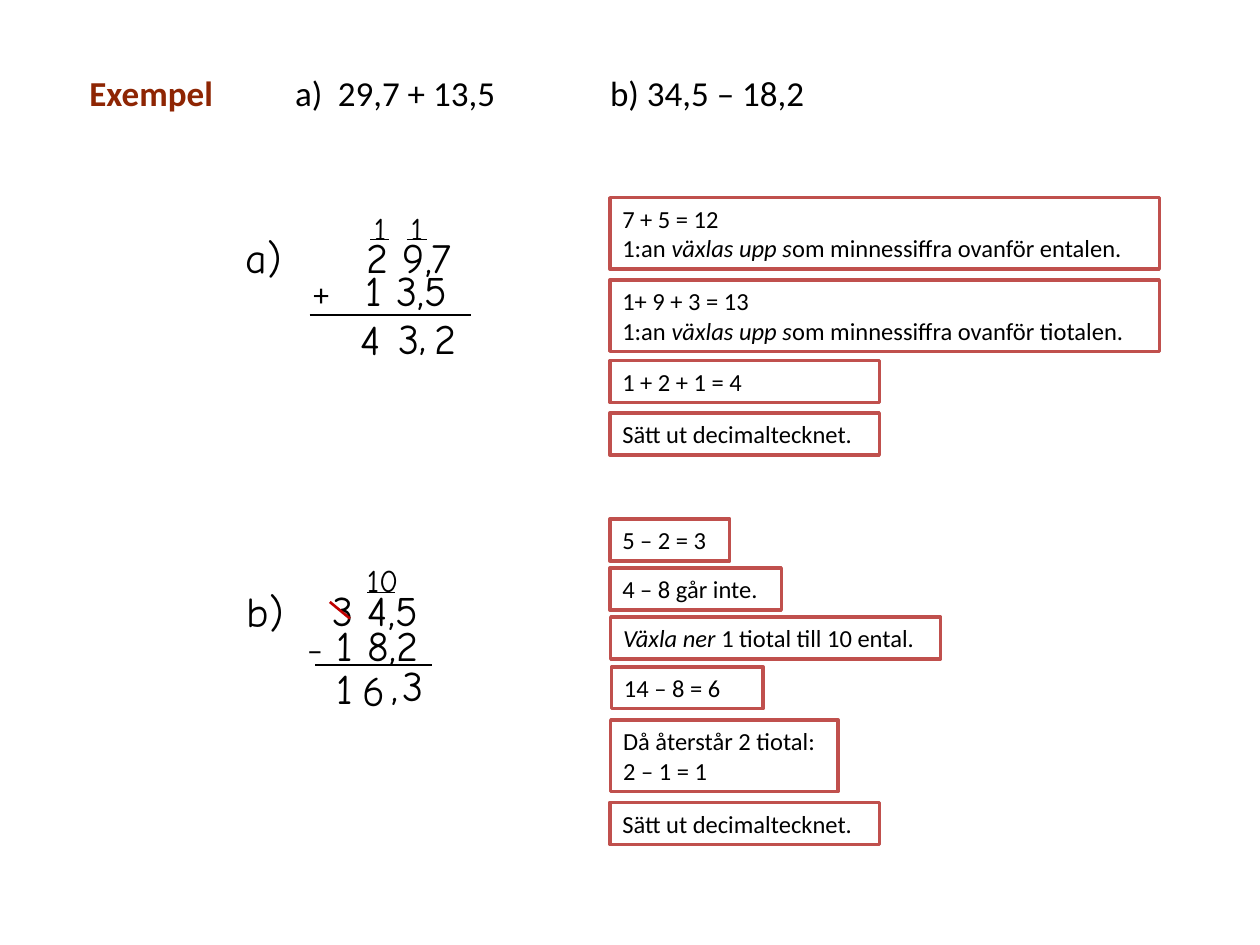
from dataclasses import dataclass

from lxml.etree import SubElement
from pptx import Presentation
from pptx.dml.color import RGBColor
from pptx.enum.shapes import MSO_CONNECTOR as Connector, MSO_SHAPE as Shape
from pptx.enum.text import MSO_ANCHOR as Anchor, MSO_AUTO_SIZE as AutoSize, PP_ALIGN as Align
from pptx.oxml.ns import qn
from pptx.util import Pt

COLORS = {
    "text": "000000",
    "heading": "8E2503",
    "box_fill": "FFFFFF",
    "box_border": "C0504D",
    "strike": "C00000",
}
PRINT = "Calibri"
HAND = "Comic Neue"


@dataclass(frozen=True)
class Run:
    text: str
    size: float = 14
    font: str = PRINT
    color: str = "text"
    bold: bool = False
    italic: bool = False


@dataclass(frozen=True)
class Label:
    left: float
    top: float
    width: float
    runs: tuple[Run, ...]
    tabs: tuple[float, ...] = ()
    wrap: bool = True


@dataclass(frozen=True)
class Step:
    left: float
    top: float
    width: float
    lines: tuple[tuple[Run, ...], ...]


@dataclass(frozen=True)
class Rule:
    left: float
    top: float
    right: float
    bottom: float
    weight: float = 1
    color: str = "text"


def rgb(name: str) -> RGBColor:
    return RGBColor.from_string(COLORS[name])


def text_height(size: float, lines: int = 1) -> float:
    return round(1.2 * size * lines + 7.2, 2)


def written(left: float, top: float, width: float, text: str, size: float = 24) -> Label:
    return Label(left, top, width, (Run(text, size, HAND),))


def step(left: float, top: float, width: float, *lines: str) -> Step:
    return Step(left, top, width, tuple((Run(line),) for line in lines))


def carry_step(top: float, total: str, place: str) -> Step:
    explanation = (
        Run("1:an "),
        Run("växlas upp s", italic=True),
        Run(f"om minnessiffra ovanför {place}."),
    )
    return Step(348.5, top, 314, ((Run(total),), explanation))


def add_runs(paragraph, runs: tuple[Run, ...]) -> None:
    paragraph.alignment = Align.LEFT
    for item in runs:
        run = paragraph.add_run()
        run.text = item.text
        run.font.name = item.font
        run.font.size = Pt(item.size)
        run.font.bold = item.bold
        run.font.italic = item.italic
        run.font.color.rgb = rgb(item.color)


def add_label(shapes, label: Label) -> None:
    height = text_height(max(run.size for run in label.runs))
    shape = shapes.add_textbox(Pt(label.left), Pt(label.top), Pt(label.width), Pt(height))
    frame = shape.text_frame
    frame.word_wrap = label.wrap
    frame.auto_size = AutoSize.SHAPE_TO_FIT_TEXT
    paragraph = frame.paragraphs[0]
    add_runs(paragraph, label.runs)
    if label.tabs:
        properties = paragraph._p.get_or_add_pPr()
        tab_list = SubElement(properties, qn("a:tabLst"))
        for position in label.tabs:
            SubElement(tab_list, qn("a:tab"), pos=str(Pt(position)), algn="l")


def add_step(shapes, item: Step) -> None:
    height = text_height(14, len(item.lines))
    shape = shapes.add_shape(
        Shape.RECTANGLE, Pt(item.left), Pt(item.top), Pt(item.width), Pt(height)
    )
    shape.shadow.inherit = False
    shape.fill.solid()
    shape.fill.fore_color.rgb = rgb("box_fill")
    shape.line.color.rgb = rgb("box_border")
    shape.line.width = Pt(2)
    frame = shape.text_frame
    frame.word_wrap = True
    frame.auto_size = AutoSize.SHAPE_TO_FIT_TEXT
    frame.vertical_anchor = Anchor.TOP
    for index, runs in enumerate(item.lines):
        paragraph = frame.add_paragraph() if index else frame.paragraphs[0]
        add_runs(paragraph, runs)


def add_rule(shapes, rule: Rule) -> None:
    connector = shapes.add_connector(
        Connector.STRAIGHT, Pt(rule.left), Pt(rule.top), Pt(rule.right), Pt(rule.bottom)
    )
    connector.line.color.rgb = rgb(rule.color)
    connector.line.width = Pt(rule.weight)
    SubElement(connector._element.spPr, qn("a:effectLst"))


def add_carry(shapes, rule: Rule, labels: tuple[Label, ...]) -> None:
    group = shapes.add_group_shape()
    add_rule(group.shapes, rule)
    for label in labels:
        add_label(group.shapes, label)


LABELS = (
    Label(44, 37.5, 86, (Run("Exempel", 20, color="heading", bold=True),), wrap=False),
    Label(161.5, 37.5, 489, (Run("a)\t29,7 + 13,5\tb) 34,5 – 18,2", 20),), (24.5, 180)),
    written(133.5, 129, 39, "a)"),
    written(202.5, 129, 82, "2 9,7"),
    Label(172, 147.5, 130, (Run("+", 18), Run("\t1 3,5", 24, HAND)), (30,)),
    written(199, 175.5, 21, "4"),
    written(232.5, 173.5, 21, ","),
    written(134, 331, 39, "b)"),
    written(183, 330.5, 94, "3 4,5"),
    Label(168.5, 350.5, 130, (Run("–", 18), Run(" 1 8,2", 24, HAND))),
    written(185, 375, 21, "1"),
    written(200, 376, 21, "6"),
    written(216.5, 373.5, 21, ","),
    written(223, 373.5, 21, "3"),
)

CARRIES = (
    (Rule(210, 338.5, 226, 338.5, 0.75), (written(202.5, 317, 42.5, "10", 18),)),
    (
        Rule(232.5, 137, 244, 137, 0.75),
        (written(241, 175, 21, "2"), written(227.5, 116, 17.5, "1", 18)),
    ),
    (
        Rule(211.5, 137, 222.5, 137, 0.75),
        (written(220.5, 175, 21, "3"), written(206.5, 116, 17.5, "1", 18)),
    ),
)

RULES = (
    Rule(177, 180, 269, 180),
    Rule(180, 380, 247, 380),
    Rule(188.5, 344, 200, 353.5, 1.5, "strike"),
)

STEPS = (
    carry_step(113, "7 + 5 = 12", "entalen"),
    carry_step(160, "1+ 9 + 3 = 13", "tiotalen"),
    step(348.5, 206, 154, "1 + 2 + 1 = 4"),
    step(348.5, 236, 154, "Sätt ut decimaltecknet."),
    step(348.5, 296.5, 68.5, "5 – 2 = 3"),
    step(348.5, 324.5, 98, "4 – 8 går inte."),
    Step(349, 352.5, 188.5, ((Run("Växla ner ", italic=True), Run("1 tiotal till 10 ental.")),)),
    step(349.5, 381, 86.5, "14 – 8 = 6"),
    step(349, 411.5, 130, "Då återstår 2 tiotal:", "2 – 1 = 1"),
    step(348.5, 458.5, 154, "Sätt ut decimaltecknet."),
)


def main() -> None:
    presentation = Presentation()
    presentation.slide_width = Pt(720)
    presentation.slide_height = Pt(540)
    slide = presentation.slides.add_slide(presentation.slide_layouts[6])
    for label in LABELS:
        add_label(slide.shapes, label)
    for rule, labels in CARRIES:
        add_carry(slide.shapes, rule, labels)
    for rule in RULES:
        add_rule(slide.shapes, rule)
    for item in STEPS:
        add_step(slide.shapes, item)
    presentation.save("out.pptx")


if __name__ == "__main__":
    main()
